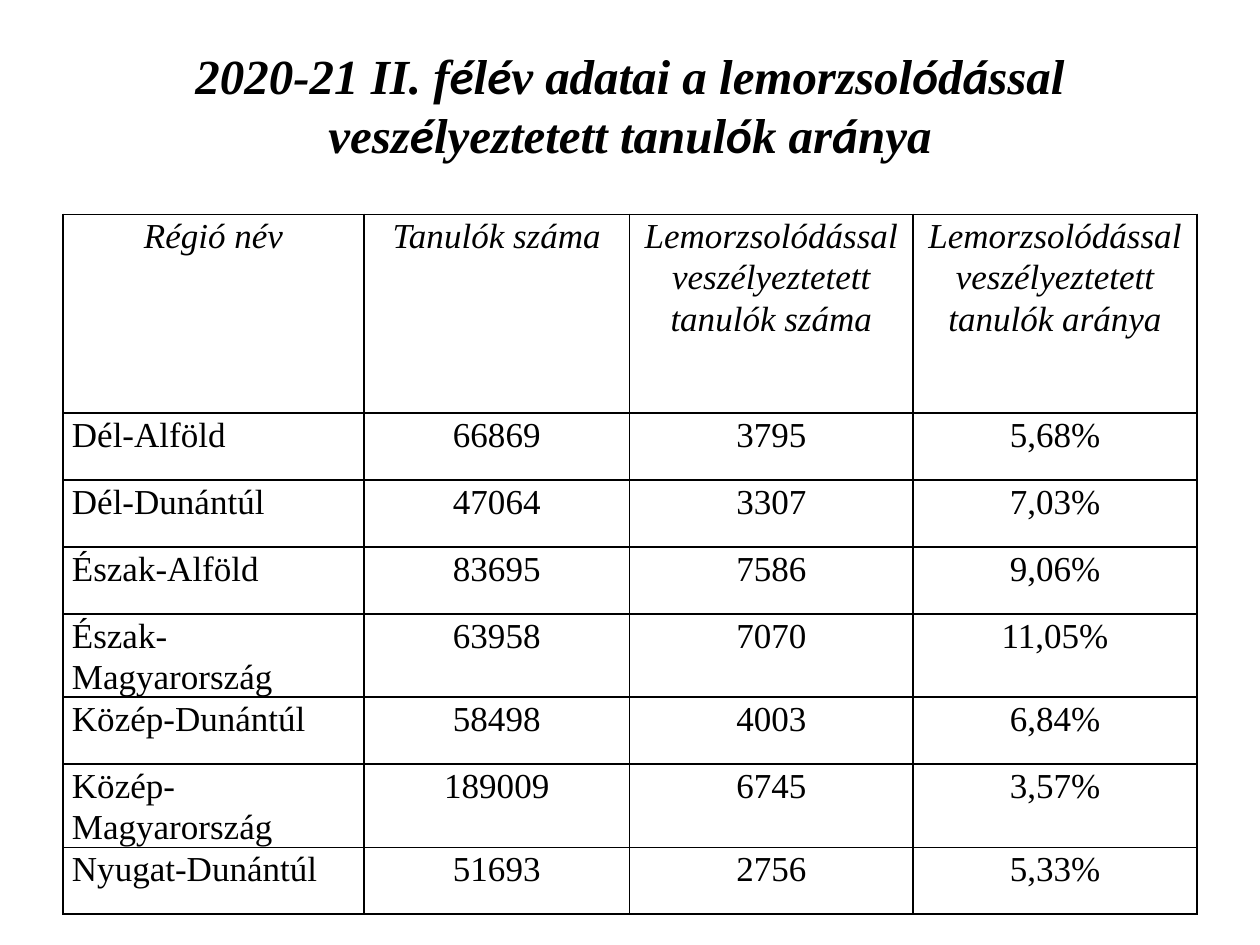
from dataclasses import dataclass
from itertools import groupby

from lxml.etree import SubElement
from pptx import Presentation
from pptx.dml.color import RGBColor
from pptx.enum.text import MSO_ANCHOR, MSO_AUTO_SIZE, PP_ALIGN
from pptx.oxml.ns import qn
from pptx.slide import Slide
from pptx.table import _Cell
from pptx.util import Cm, Pt


@dataclass(frozen=True)
class Theme:
    """Colours, fonts and type sizes of the slide."""

    ink: str = "000000"
    font: str = "Times New Roman"
    accent_font: str = "Calibri"
    accented: str = "éóá"
    title_size: Pt = Pt(28)
    table_size: Pt = Pt(20)
    border: Pt = Pt(1)
    line_spacing: float = 1.07
    side_margin: Cm = Cm(0.18)


@dataclass(frozen=True)
class Region:
    """One region's pupils, pupils at risk and their share."""

    name: str
    pupils: str
    at_risk: str
    share: str

    def values(self) -> tuple[str, ...]:
        """Return the texts in column order."""
        return self.name, self.pupils, self.at_risk, self.share


THEME = Theme()
TITLE = "2020-21 II. félév adatai a lemorzsolódással veszélyeztetett tanulók aránya"
HEADER = Region(
    "Régió név",
    "Tanulók száma",
    "Lemorzsolódással veszélyeztetett tanulók száma",
    "Lemorzsolódással veszélyeztetett tanulók aránya",
)
REGIONS = [
    Region("Dél-Alföld", "66869", "3795", "5,68%"),
    Region("Dél-Dunántúl", "47064", "3307", "7,03%"),
    Region("Észak-Alföld", "83695", "7586", "9,06%"),
    Region("Észak-Magyarország", "63958", "7070", "11,05%"),
    Region("Közép-Dunántúl", "58498", "4003", "6,84%"),
    Region("Közép-Magyarország", "189009", "6745", "3,57%"),
    Region("Nyugat-Dunántúl", "51693", "2756", "5,33%"),
]
LEFT, WIDTH = Cm(1.27), Cm(22.86)
COLUMN_WIDTHS = [Cm(6.07), Cm(5.35), Cm(5.72), Cm(5.72)]
HEADER_HEIGHT, ROW_HEIGHT = Cm(4.01), Cm(1.35)


def draw_title(page: Slide) -> None:
    """Write the title, with its accented letters in their own font."""
    box = page.shapes.title
    box.left, box.top, box.width, box.height = LEFT, Cm(0.76), WIDTH, Cm(3.84)
    frame = box.text_frame
    frame.word_wrap = True
    frame.auto_size = MSO_AUTO_SIZE.NONE
    frame.vertical_anchor = MSO_ANCHOR.MIDDLE
    frame.margin_bottom = Cm(1.27)
    para = frame.paragraphs[0]
    para.alignment = PP_ALIGN.CENTER
    for accented, letters in groupby(TITLE, key=lambda letter: letter in THEME.accented):
        span = para.add_run()
        span.text = "".join(letters)
        span.font.name = THEME.accent_font if accented else THEME.font
        span.font.size = THEME.title_size
        span.font.bold = span.font.italic = True
        span.font.color.rgb = RGBColor.from_string(THEME.ink)


def draw_borders(cell: _Cell) -> None:
    """Draw a thin line on all four sides of a cell."""
    properties = cell._tc.get_or_add_tcPr()
    for position, side in enumerate(("a:lnL", "a:lnR", "a:lnT", "a:lnB")):
        line = SubElement(properties, qn(side), w=str(THEME.border))
        SubElement(SubElement(line, qn("a:solidFill")), qn("a:srgbClr"), val=THEME.ink)
        properties.insert(position, line)


def draw_cell(cell: _Cell, text: str, centred: bool, italic: bool) -> None:
    """Fill and format one table cell."""
    cell.fill.background()
    cell.margin_left = cell.margin_right = THEME.side_margin
    cell.margin_top = cell.margin_bottom = 0
    cell.text_frame.text = text
    para = cell.text_frame.paragraphs[0]
    para.alignment = PP_ALIGN.CENTER if centred else PP_ALIGN.LEFT
    para.line_spacing = THEME.line_spacing
    font = para.runs[0].font
    font.name, font.size, font.italic = THEME.font, THEME.table_size, italic
    font.color.rgb = RGBColor.from_string(THEME.ink)
    draw_borders(cell)


def draw_table(page: Slide) -> None:
    """Lay out the header and one row for each region."""
    records = [HEADER, *REGIONS]
    height = HEADER_HEIGHT + ROW_HEIGHT * len(REGIONS)
    table = page.shapes.add_table(
        len(records), len(COLUMN_WIDTHS), LEFT, Cm(4.32), WIDTH, height
    ).table
    table.first_row = table.horz_banding = False
    for column, width in zip(table.columns, COLUMN_WIDTHS):
        column.width = width
    for row, record in zip(table.rows, records):
        is_header = record is HEADER
        row.height = HEADER_HEIGHT if is_header else ROW_HEIGHT
        for index, (cell, text) in enumerate(zip(row.cells, record.values())):
            draw_cell(cell, text, centred=is_header or index > 0, italic=is_header)


def main() -> None:
    """Build the slide and save the deck."""
    deck = Presentation()
    deck.slide_width, deck.slide_height = Cm(25.4), Cm(19.05)
    page = deck.slides.add_slide(deck.slide_layouts.get_by_name("Title Only"))
    draw_title(page)
    draw_table(page)
    deck.save("out.pptx")


if __name__ == "__main__":
    main()
